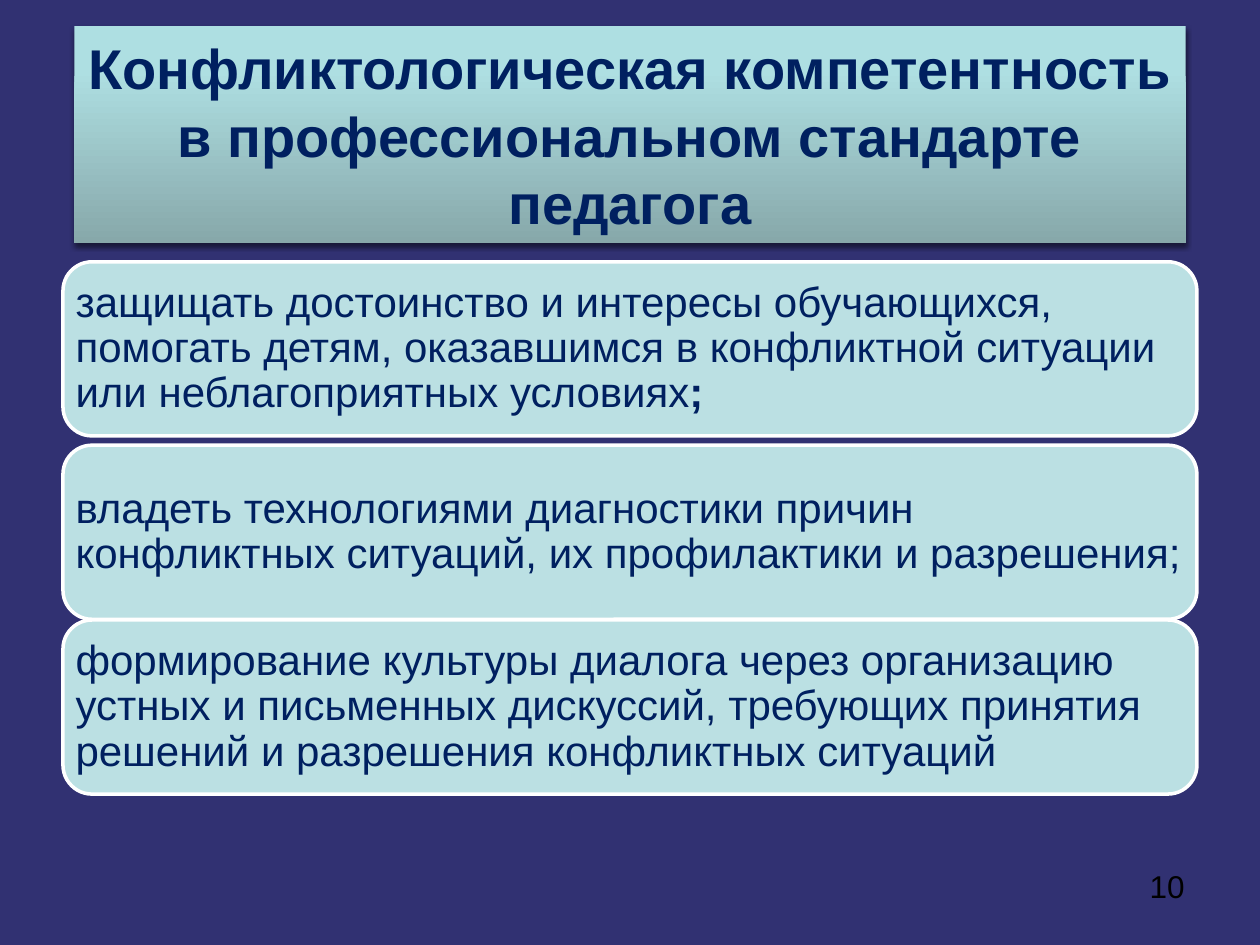
from lxml import etree
from pptx import Presentation
from pptx.dml.color import RGBColor
from pptx.enum.shapes import MSO_SHAPE
from pptx.enum.text import MSO_ANCHOR, PP_ALIGN
from pptx.oxml import parse_xml
from pptx.oxml.ns import nsdecls
from pptx.util import Pt

NAVY = "002060"
TITLE = "Конфликтологическая компетентность в профессиональном стандарте педагога"
# top of each card, with its text as (wording, bold) runs
CARDS = [
    (149.6, [("защищать достоинство и интересы обучающихся, помогать детям, "
              "оказавшимся в конфликтной ситуации или неблагоприятных условиях", False),
             (";", True)]),
    (254.4, [("владеть технологиями диагностики причин конфликтных ситуаций, "
              "их профилактики и разрешения;", False)]),
    (354.3, [("формирование культуры диалога через организацию устных и письменных "
              "дискуссий, требующих принятия решений и разрешения конфликтных ситуаций", False)]),
]


def rgb(value):
    return RGBColor.from_string(value)


def write(sp, runs, size, color, frame, para):
    """Fill sp with one paragraph of (text, bold) runs and set its formats."""
    tf = sp.text_frame
    p = tf.paragraphs[0]
    for obj, formats in ((tf, {"word_wrap": True, **frame}), (p, para)):
        for name, value in formats.items():
            setattr(obj, name, value)
    for text, bold in runs:
        r = p.add_run()
        r.text = text
        for name, value in {"name": "Arial", "size": Pt(size), "bold": bold}.items():
            setattr(r.font, name, value)
        r.font.color.rgb = rgb(color)


prs = Presentation()
prs.slide_width, prs.slide_height = Pt(720), Pt(540)
s = prs.slides.add_slide(prs.slide_layouts[6])
s.background.fill.solid()
s.background.fill.fore_color.rgb = rgb("313172")

# Title banner with a vertical gradient and a soft shadow
sp = s.shapes.add_shape(MSO_SHAPE.RECTANGLE, Pt(42.5), Pt(15), Pt(635), Pt(124))
sp.line.fill.background()
sp.fill.gradient()
sp.fill.gradient_angle = 270
for stop, color, position in zip(sp.fill.gradient_stops, ("AEDFE2", "87A8AA"), (0.2, 1)):
    stop.color.rgb = rgb(color)
    stop.position = position
sp.shadow.inherit = False
effects = sp._element.spPr.find("{*}effectLst")
effects.append(parse_xml(
    f'<a:outerShdw {nsdecls("a")} blurRad="40000" dist="23000" dir="5400000" rotWithShape="0">'
    '<a:srgbClr val="000000"><a:alpha val="50000"/></a:srgbClr></a:outerShdw>'))
write(sp, [(TITLE, True)], 32, NAVY,
      {"vertical_anchor": MSO_ANCHOR.MIDDLE}, {"alignment": PP_ALIGN.CENTER})

# Requirement cards
for top, runs in CARDS:
    sp = s.shapes.add_shape(MSO_SHAPE.ROUNDED_RECTANGLE, Pt(36), Pt(top), Pt(648), Pt(99.5))
    sp.shadow.inherit = False
    sp.fill.solid()
    sp.fill.fore_color.rgb = rgb("BBE0E3")
    sp.line.color.rgb = rgb("FFFFFF")
    sp.line.width = Pt(2)
    write(sp, runs, 24, NAVY,
          {"vertical_anchor": MSO_ANCHOR.MIDDLE, "margin_left": Pt(2.35), "margin_right": Pt(2.35),
           "margin_top": Pt(2.35), "margin_bottom": Pt(2.35)},
          {"alignment": PP_ALIGN.LEFT, "line_spacing": 0.9})

# Slide number
sp = s.shapes.add_textbox(Pt(516), Pt(492), Pt(168), Pt(37.5))
write(sp, [("10", False)], 18, "000000", {}, {"alignment": PP_ALIGN.RIGHT})

prs.save("out.pptx")
